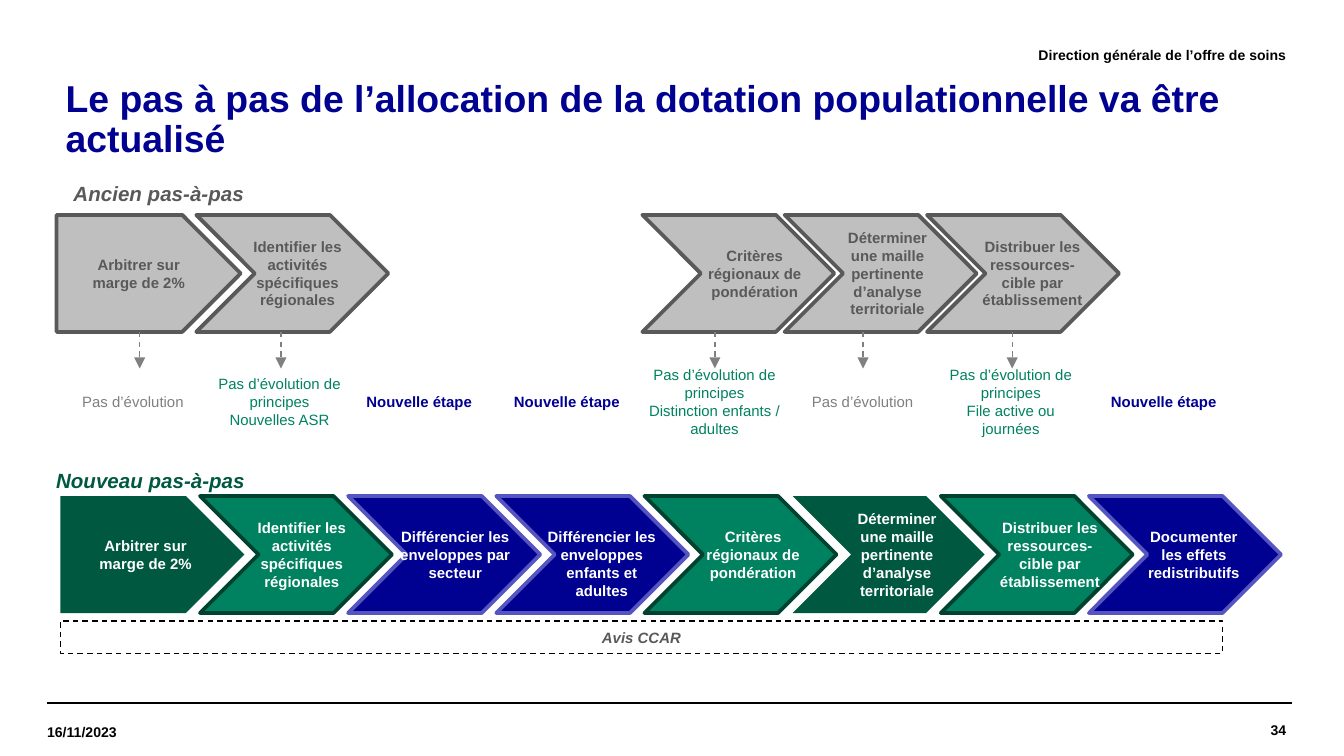
from lxml import etree
from pptx import Presentation
from pptx import util as u
from pptx.dml.color import RGBColor
from pptx.enum import dml, shapes, text
from pptx.oxml.ns import qn

C = {"black": "000000", "white": "FFFFFF", "navy": "000091", "lilac": "5555C1",
     "dark": "595959", "mid": "808080", "light": "BFBFBF",
     "forest": "005841", "green": "008260", "deep": "004130"}
L, M, R = text.PP_ALIGN.LEFT, text.PP_ALIGN.CENTER, text.PP_ALIGN.RIGHT


def write(tf, lines, color, align=M, inset=None, **fmt):
    tf.word_wrap = True
    tf.auto_size = text.MSO_AUTO_SIZE.NONE
    tf.vertical_anchor = text.MSO_ANCHOR.MIDDLE
    if inset is not None:
        for side in ("left", "top", "right", "bottom"):
            setattr(tf, "margin_" + side, u.Cm(inset))
    for i, line in enumerate(lines.split("\n")):
        p = tf.paragraphs[0] if i == 0 else tf.add_paragraph()
        p.alignment = align
        r = p.add_run()
        r.text = line
        for key, value in {"name": "Arial", "size": u.Pt(8), **fmt}.items():
            setattr(r.font, key, value)
        r.font.color.rgb = RGBColor.from_string(C[color])


def box(x, y, w, h, lines, color, **fmt):
    tb = s.shapes.add_textbox(u.Cm(x), u.Cm(y), u.Cm(w), u.Cm(h))
    write(tb.text_frame, lines, color, **fmt)


prs = Presentation()
prs.slide_width, prs.slide_height = u.Cm(25.4), u.Cm(14.28)
s = prs.slides.add_slide(prs.slide_layouts[5])

title = s.shapes.title
for key, value in {"left": 0.94, "top": 1.52, "width": 23.39, "height": 1.5}.items():
    setattr(title, key, u.Cm(value))
write(title.text_frame,
      "Le pas à pas de l’allocation de la dotation populationnelle va être actualisé",
      "navy", align=L, size=u.Pt(20), bold=True)
title.text_frame.margin_left = u.Cm(0.3)
title.text_frame.paragraphs[0].line_spacing = 0.9

for x, y, w, h, words, align in (
        (7.98, 0.53, 16.33, 1, "Direction générale de l’offre de soins", R),
        (0.89, 13.34, 3.35, 0.97, "16/11/2023", L),
        (20.55, 13.28, 3.76, 1, "34", R)):
    box(x, y, w, h, words, "black", align=align, inset=0, size=u.Pt(7.5), bold=True)

for x, y, words, color in ((1.14, 3.28, "Ancien pas-à-pas", "dark"),
                           (0.81, 8.71, "Nouveau pas-à-pas", "forest")):
    box(x, y, 7.19, 0.74, words, color, align=L, size=u.Pt(11), bold=True, italic=True)

arbitrate = "Arbitrer sur marge de 2%"
identify = "Identifier les activités spécifiques régionales"
criteria = "Critères régionaux de pondération"
area = "Déterminer une maille pertinente d’analyse territoriale"
distribute = "Distribuer les ressources-cible par établissement"
sector = "Différencier les enveloppes par secteur"
children = "Différencier les enveloppes enfants et adultes"
effects = "Documenter les effets redistributifs"

old, kept = ("light", "dark"), ("forest", None)
revised, added = ("green", "deep"), ("navy", "lilac")
old_x = [1.07, 3.71] + [12.14 + 2.69 * i for i in range(3)]
new_x = [1.14] + [3.78 + 2.8 * i for i in range(7)]
old_steps = [(arbitrate, old, 1.42, 2.41, 2), (identify, old, 4.42, 2.41, 4),
             (criteria, old, 13.06, 2.41, 3), (area, old, 15.57, 2.41, 5),
             (distribute, old, 18.31, 2.41, 4)]
new_steps = [(arbitrate, kept, 1.55, 2.41, 2), (identify, revised, 4.5, 2.41, 4),
             (sector, added, 7.26, 2.69, 3), (children, added, 10.03, 2.69, 4),
             (criteria, revised, 13.03, 2.41, 3), (area, kept, 15.75, 2.41, 5),
             (distribute, revised, 18.64, 2.41, 4), (effects, added, 21.36, 2.41, 3)]

for top, xs, steps, color in ((4.06, old_x, old_steps, "dark"),
                              (9.37, new_x, new_steps, "white")):
    for i, (x, (_, (fill, edge), *_)) in enumerate(zip(xs, steps)):
        kind = shapes.MSO_SHAPE.CHEVRON if i else shapes.MSO_SHAPE.PENTAGON
        sp = s.shapes.add_shape(kind, u.Cm(x), u.Cm(top), u.Cm(3.63 if i else 3.48), u.Cm(2.21))
        sp.shadow.inherit = False
        sp.fill.solid()
        sp.fill.fore_color.rgb = RGBColor.from_string(C[fill])
        if edge:
            sp.line.color.rgb = RGBColor.from_string(C[edge])
            sp.line.width = u.Pt(2)
        else:
            sp.line.fill.background()
    for words, _, x, w, rows in steps:
        h = 0.27 + 0.34 * rows
        mid = top + (1.28 if words == children else 1.1)
        box(x, mid - h / 2, w, h, words, color, bold=True)

same, fresh = "Pas d’évolution", "Nouvelle étape"
principle = "Pas d’évolution de principes\n"
for x, words, color, rows in (
        (0.94, same, "mid", 1), (3.71, principle + "Nouvelles ASR", "green", 3),
        (6.35, fresh, "navy", 1), (9.14, fresh, "navy", 1),
        (11.93, principle + "Distinction enfants / adultes", "green", 4),
        (14.73, same, "mid", 1),
        (17.53, principle + "File active ou journées", "green", 4),
        (20.42, fresh, "navy", 1)):
    h = 0.27 + 0.34 * rows
    box(x, 7.59 - h / 2, 3.15, h, words, color, bold=words == fresh)

arrows = [(x, 6.27, x, 6.96, "mid", 0.75) for x in (2.64, 5.31, 13.51, 16.31, 19.13)]
for x1, y1, x2, y2, color, width in arrows + [(0.89, 13.28, 24.41, 13.28, "black", 0.8)]:
    cn = s.shapes.add_connector(shapes.MSO_CONNECTOR.STRAIGHT,
                                u.Cm(x1), u.Cm(y1), u.Cm(x2), u.Cm(y2))
    cn.line.color.rgb = RGBColor.from_string(C[color])
    cn.line.width = u.Pt(width)
    if color == "mid":
        cn.line.dash_style = dml.MSO_LINE.DASH
        etree.SubElement(cn.line._get_or_add_ln(), qn("a:tailEnd"), type="triangle")
    etree.SubElement(cn._element.spPr, qn("a:effectLst"))

sp = s.shapes.add_shape(shapes.MSO_SHAPE.RECTANGLE, u.Cm(1.14), u.Cm(11.73), u.Cm(21.97), u.Cm(0.61))
sp.shadow.inherit = False
sp.fill.solid()
sp.fill.fore_color.rgb = RGBColor.from_string(C["white"])
sp.line.color.rgb = RGBColor.from_string(C["black"])
sp.line.width = u.Pt(0.75)
sp.line.dash_style = dml.MSO_LINE.DASH
write(sp.text_frame, "Avis CCAR", "dark", bold=True, italic=True)

prs.save("out.pptx")
